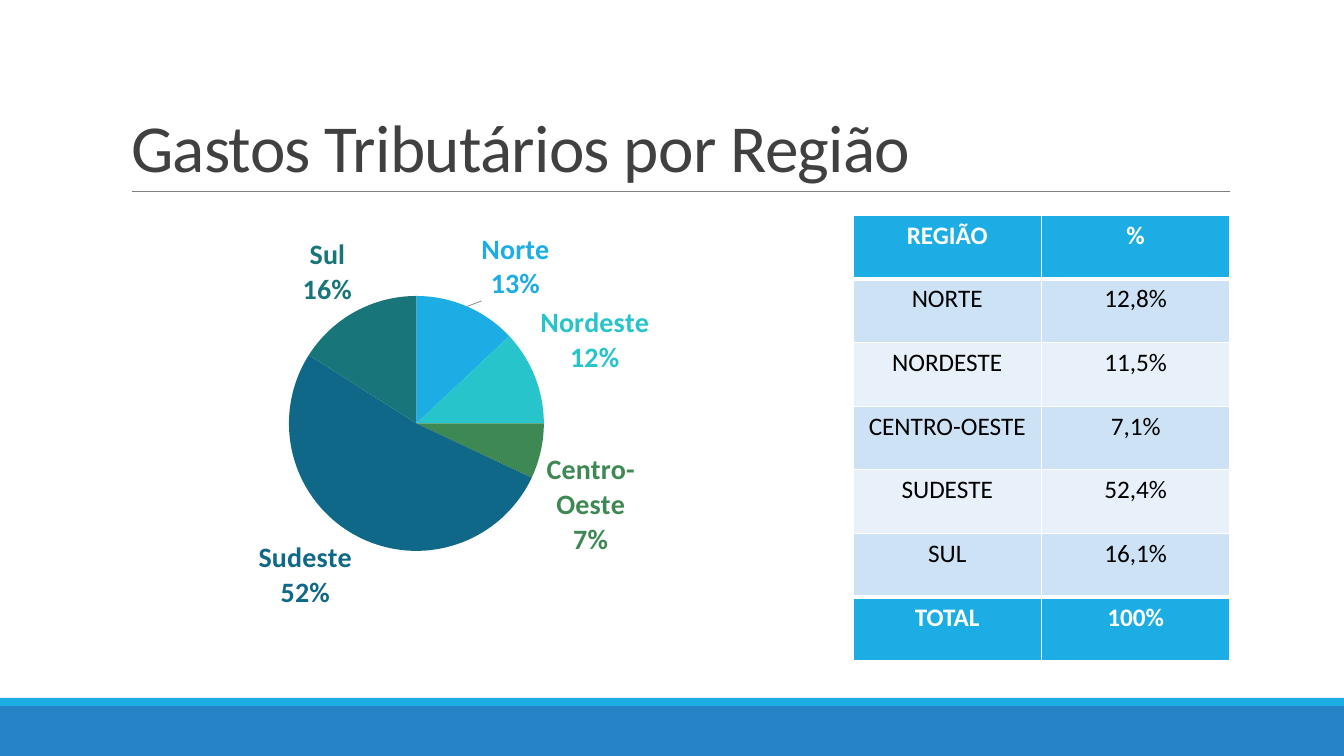
from dataclasses import dataclass

from lxml import etree
from pptx import Presentation
from pptx.chart.data import CategoryChartData
from pptx.dml.color import RGBColor
from pptx.enum.chart import XL_CHART_TYPE, XL_LABEL_POSITION
from pptx.enum.shapes import MSO_CONNECTOR, MSO_SHAPE
from pptx.enum.text import MSO_ANCHOR, MSO_AUTO_SIZE, PP_ALIGN
from pptx.oxml.ns import qn
from pptx.util import Emu, Pt

PIE = XL_CHART_TYPE.PIE
OUTSIDE_END = XL_LABEL_POSITION.OUTSIDE_END
STRAIGHT = MSO_CONNECTOR.STRAIGHT
RECTANGLE = MSO_SHAPE.RECTANGLE
BOTTOM = MSO_ANCHOR.BOTTOM
NO_AUTOFIT = MSO_AUTO_SIZE.NONE
CENTER = PP_ALIGN.CENTER
LEFT = PP_ALIGN.LEFT
TITLE_ONLY = 5


@dataclass(frozen=True)
class Theme:
    font: str = "Calibri"
    title_size: int = 48
    label_size: int = 20
    table_size: int = 18
    title: str = "404040"
    rule: str = "808080"
    accent: str = "1CADE4"
    footer: str = "2683C6"
    row_dark: str = "CDE3F5"
    row_light: str = "E8F1FA"
    white: str = "FFFFFF"
    black: str = "000000"


@dataclass(frozen=True)
class Box:
    left: int
    top: int
    width: int
    height: int

    def emu(self) -> tuple[Emu, Emu, Emu, Emu]:
        return px(self.left), px(self.top), px(self.width), px(self.height)


@dataclass(frozen=True)
class Region:
    name: str
    share: float
    color: str
    label_shift: float = 0


@dataclass(frozen=True)
class Band:
    box: Box
    color: str


THEME = Theme()
TITLE_BOX = Box(121, 31, 1109, 160)
CHART_BOX = Box(121, 215, 604, 446)
PIE_BOX = Box(289, 296, 255, 255)
TABLE_BOX = Box(853, 215, 377, 446)
BANDS = [
    Band(Box(0, 706, 1344, 50), THEME.footer),
    Band(Box(0, 698, 1344, 8), THEME.accent),
]
REGIONS = [
    Region("Norte", 12.8, "1CADE4", label_shift=0.02),
    Region("Nordeste", 11.5, "28C4CC"),
    Region("Centro-Oeste", 7.1, "3E8853"),
    Region("Sudeste", 52.4, "106889"),
    Region("Sul", 16.1, "18767A"),
]


def px(length: int) -> Emu:
    return Emu(round(length * 914400 / 100.8))


def rgb(color: str) -> RGBColor:
    return RGBColor.from_string(color)


def set_font(font, size: int, color: str, bold: bool = False) -> None:
    font.name = THEME.font
    font.size = Pt(size)
    font.bold = bold
    font.color.rgb = rgb(color)


def add_solid_fill(parent, color: str) -> None:
    fill = etree.SubElement(parent, qn("a:solidFill"))
    etree.SubElement(fill, qn("a:srgbClr"), val=color)


def draw_band(slide, band: Band) -> None:
    bar = slide.shapes.add_shape(RECTANGLE, *band.box.emu())
    bar.shadow.inherit = False
    bar.fill.solid()
    bar.fill.fore_color.rgb = rgb(band.color)
    bar.line.fill.background()


def draw_title(slide, text: str) -> None:
    title = slide.shapes.title
    title.left, title.top, title.width, title.height = TITLE_BOX.emu()
    frame = title.text_frame
    frame.text = text
    frame.word_wrap = True
    frame.auto_size = NO_AUTOFIT
    frame.vertical_anchor = BOTTOM
    heading = frame.paragraphs[0]
    heading.alignment = LEFT
    heading.line_spacing = 0.85
    run = heading.runs[0]
    set_font(run.font, THEME.title_size, THEME.title)
    run.font._element.set("spc", "-50")

    rule = slide.shapes.add_connector(STRAIGHT, px(132), px(191), px(1230), px(191))
    rule.line.color.rgb = rgb(THEME.rule)
    rule.line.width = Pt(0.5)
    etree.SubElement(rule._element.spPr, qn("a:effectLst"))


def manual_layout(**values: str):
    layout = etree.Element(qn("c:layout"))
    manual = etree.SubElement(layout, qn("c:manualLayout"))
    for tag, value in values.items():
        etree.SubElement(manual, qn(f"c:{tag}")).set("val", value)
    return layout


def place_pie(chart) -> None:
    plot_area = chart._chartSpace.chart.plotArea
    for layout in plot_area.findall(qn("c:layout")):
        plot_area.remove(layout)
    plot_area.insert(0, manual_layout(
        layoutTarget="inner", xMode="edge", yMode="edge",
        x=f"{(PIE_BOX.left - CHART_BOX.left) / CHART_BOX.width:.4f}",
        y=f"{(PIE_BOX.top - CHART_BOX.top) / CHART_BOX.height:.4f}",
        w=f"{PIE_BOX.width / CHART_BOX.width:.4f}",
        h=f"{PIE_BOX.height / CHART_BOX.height:.4f}"))


def style_slice(point, region: Region) -> None:
    point.format.fill.solid()
    point.format.fill.fore_color.rgb = rgb(region.color)
    label = point.data_label
    set_font(label.font, THEME.label_size, region.color, bold=True)
    label.position = OUTSIDE_END

    # Category and whole percentage on separate lines
    element = label._dLbl
    for tag, shown in (("showVal", "0"), ("showCatName", "1"), ("showPercent", "1")):
        element.find(qn(f"c:{tag}")).set("val", shown)
    etree.SubElement(element, qn("c:separator")).text = "\n"
    number_format = etree.Element(qn("c:numFmt"), formatCode="0%", sourceLinked="0")
    element.insert(1, number_format)
    if region.label_shift:
        element.insert(1, manual_layout(x=str(region.label_shift), y="0"))


def draw_chart(slide) -> None:
    shares = CategoryChartData()
    shares.categories = [region.name for region in REGIONS]
    shares.add_series("Series 1", [round(region.share) for region in REGIONS])
    chart = slide.shapes.add_chart(PIE, *CHART_BOX.emu(), shares).chart
    chart.has_title = False
    chart.has_legend = False
    set_font(chart.font, THEME.label_size, THEME.black)
    plot = chart.plots[0]
    plot.vary_by_categories = True
    place_pie(chart)
    series = plot.series[0]
    for index, region in enumerate(REGIONS):
        style_slice(series.points[index], region)
    labels = series.data_labels
    labels.show_value = False
    labels.show_category_name = True
    labels.show_percentage = True

    # Grey leader line for the shifted label
    leaders = etree.SubElement(labels._element, qn("c:leaderLines"))
    properties = etree.SubElement(leaders, qn("c:spPr"))
    add_solid_fill(etree.SubElement(properties, qn("a:ln"), w=str(Pt(0.5))), THEME.rule)


def add_borders(cell, top: int, bottom: int) -> None:
    properties = cell._tc.get_or_add_tcPr()
    for side, width in (("L", 1), ("R", 1), ("T", top), ("B", bottom)):
        line = etree.SubElement(properties, qn(f"a:ln{side}"), w=str(Pt(width)))
        add_solid_fill(line, THEME.white)


def draw_table(slide) -> None:
    rows = [("REGIÃO", "%")]
    rows += [(r.name.upper(), f"{r.share}%".replace(".", ",")) for r in REGIONS]
    rows.append(("TOTAL", "100%"))
    last = len(rows) - 1
    table = slide.shapes.add_table(len(rows), 2, *TABLE_BOX.emu()).table
    for row, texts in enumerate(rows):
        strong = row in (0, last)
        stripe = THEME.row_dark if row % 2 else THEME.row_light
        for column, text in enumerate(texts):
            cell = table.cell(row, column)
            add_borders(cell, top=3 if row in (1, last) else 1,
                        bottom=3 if row in (0, last - 1) else 1)
            cell.fill.solid()
            cell.fill.fore_color.rgb = rgb(THEME.accent if strong else stripe)
            cell.text_frame.text = text
            entry = cell.text_frame.paragraphs[0]
            entry.alignment = CENTER
            set_font(entry.runs[0].font, THEME.table_size,
                     THEME.white if strong else THEME.black, bold=strong)


def main() -> None:
    deck = Presentation()
    deck.slide_width, deck.slide_height = px(1344), px(756)
    slide = deck.slides.add_slide(deck.slide_layouts[TITLE_ONLY])
    for band in BANDS:
        draw_band(slide, band)
    draw_title(slide, "Gastos Tributários por Região")
    draw_chart(slide)
    draw_table(slide)
    deck.save("out.pptx")


if __name__ == "__main__":
    main()
